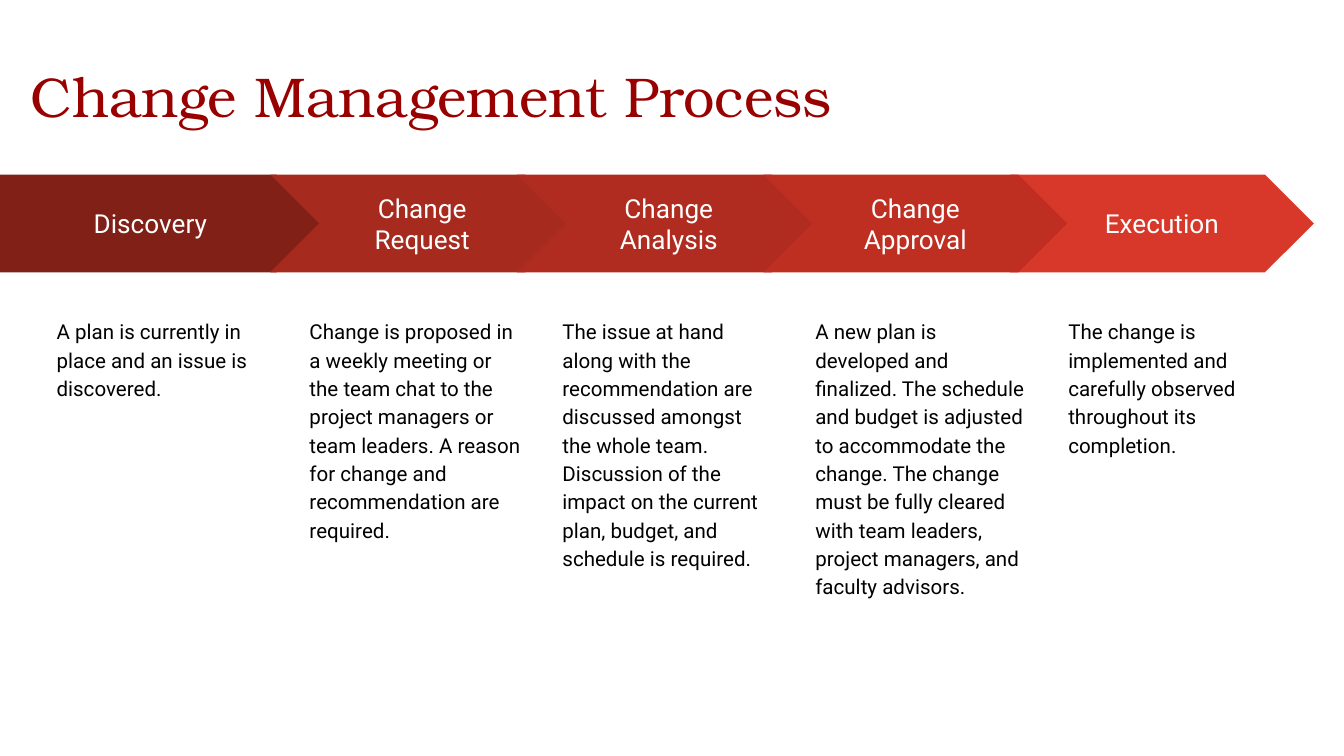
from pptx import Presentation
from pptx.dml.color import RGBColor as RGB
from pptx.enum.shapes import MSO_SHAPE as SHAPE
from pptx.enum.text import MSO_ANCHOR as ANCHOR, MSO_AUTO_SIZE as FIT, PP_ALIGN as ALIGN
from pptx.util import Cm, Pt

# Theme: colours, fonts and type sizes
THEME = {
    "title": {"name": "TeX Gyre Bonum", "size": Pt(30), "color": "990000"},
    "step": {"name": "Roboto", "size": Pt(14), "color": "FFFFFF"},
    "body": {"name": "Roboto", "size": Pt(11), "color": "000000"},
    "fills": ["802017", "A72A1E", "B02C20", "BE2F22", "D83829"],
}
FRAME = {"word_wrap": True, "auto_size": FIT.NONE,
         "margin_left": Cm(0.25), "margin_right": Cm(0.25),
         "margin_top": Cm(0.25), "margin_bottom": Cm(0.25)}

STEPS = [
    ("Discovery", "A plan is currently in place and an issue is discovered."),
    ("Change Request", "Change is proposed in a weekly meeting or the team chat to "
     "the project managers or team leaders. A reason for change and "
     "recommendation are required."),
    ("Change Analysis", "The issue at hand along with the recommendation are "
     "discussed amongst the whole team. Discussion of the impact on the current "
     "plan, budget, and schedule is required."),
    ("Change Approval", "A new plan is developed and finalized. The schedule and "
     "budget is adjusted to accommodate the change. The change must be fully "
     "cleared with team leaders, project managers, and faculty advisors."),
    ("Execution", "The change is implemented and carefully observed throughout "
     "its completion."),
]


def write(sp, text, style, anchor=ANCHOR.TOP, **para):
    tf = sp.text_frame
    for key, value in {**FRAME, "vertical_anchor": anchor}.items():
        setattr(tf, key, value)
    p = tf.paragraphs[0]
    for key, value in para.items():
        setattr(p, key, value)
    r = p.add_run()
    r.text = text
    r.font.name, r.font.size = style["name"], style["size"]
    r.font.color.rgb = RGB.from_string(style["color"])


prs = Presentation()
prs.slide_width, prs.slide_height = Cm(25.4), Cm(14.29)
s = prs.slides.add_slide(prs.slide_layouts[5])

# Title
title = s.shapes.title
box = {"left": Cm(0.33), "top": Cm(0.91), "width": Cm(18.08), "height": Cm(1.6)}
for key, value in box.items():
    setattr(title, key, value)
write(title, "Change Management Process", THEME["title"], alignment=ALIGN.LEFT)

# Steps: an arrow with its description; Approval lies over Execution
for i in (0, 1, 2, 4, 3):
    name, description = STEPS[i]
    group = s.shapes.add_group_shape()

    if i == 0:
        kind, left, width = SHAPE.PENTAGON, 0, 6.15
    else:
        kind, left, width = SHAPE.CHEVRON, 5.11 + 4.66 * (i - 1), 5.74
    arrow = group.shapes.add_shape(kind, Cm(left), Cm(3.3), Cm(width), Cm(1.85))
    arrow.shadow.inherit = False
    arrow.fill.solid()
    arrow.fill.fore_color.rgb = RGB.from_string(THEME["fills"][i])
    arrow.line.fill.background()
    write(arrow, name, THEME["step"], ANCHOR.MIDDLE, alignment=ALIGN.CENTER)

    note = group.shapes.add_textbox(Cm(0.82 + 4.78 * i), Cm(5.72), Cm(4.52), Cm(6.53))
    write(note, description, THEME["body"], line_spacing=1.15)

prs.save("out.pptx")
